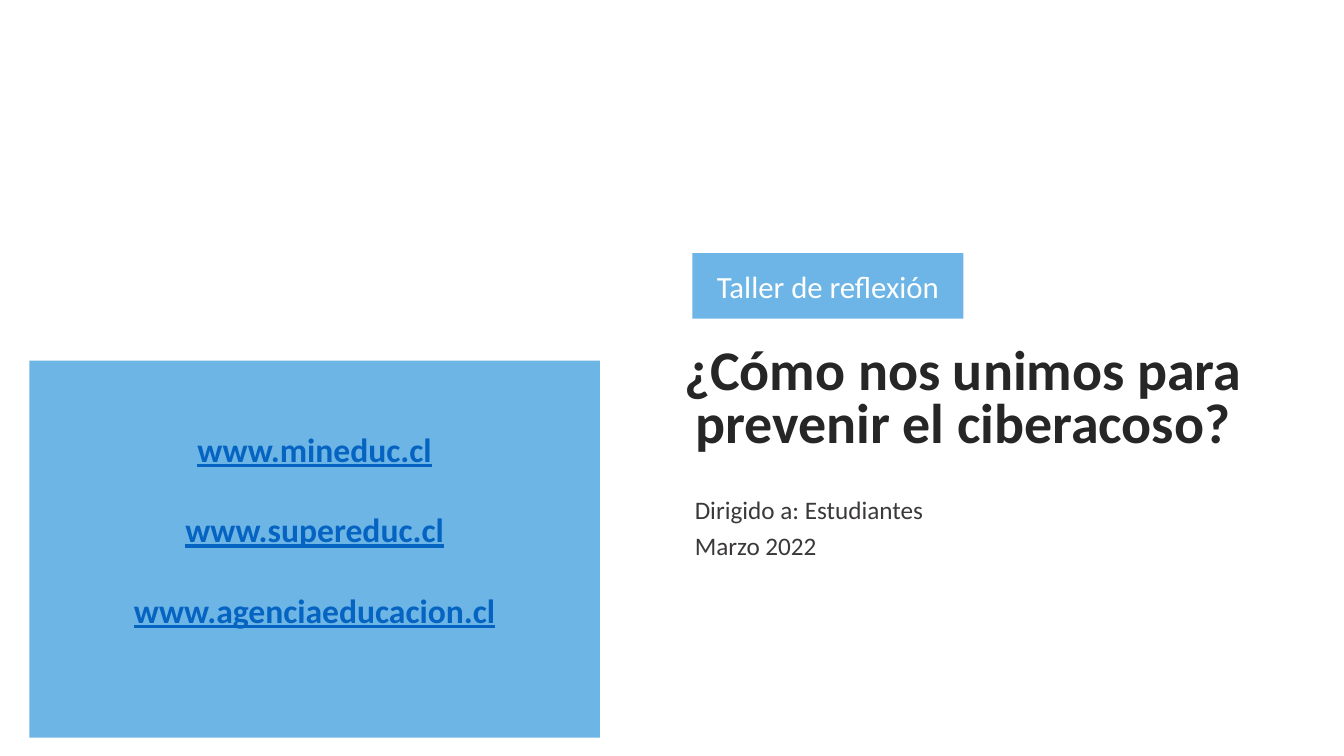
"""Builds the cover slide of a student workshop about cyberbullying."""
from dataclasses import dataclass

from pptx import Presentation
from pptx.dml.color import RGBColor
from pptx.enum.shapes import MSO_SHAPE
from pptx.enum.text import MSO_ANCHOR, PP_ALIGN
from pptx.util import Cm, Pt

RECTANGLE = MSO_SHAPE.RECTANGLE
TOP, MIDDLE = MSO_ANCHOR.TOP, MSO_ANCHOR.MIDDLE
LEFT, CENTER = PP_ALIGN.LEFT, PP_ALIGN.CENTER

TAG = "Taller de reflexión"
TITLE = "¿Cómo nos unimos para prevenir el ciberacoso?"
DETAILS = ["Dirigido a: Estudiantes", "Marzo 2022"]
WEBSITES = ["www.mineduc.cl", "www.supereduc.cl", "www.agenciaeducacion.cl"]

TAG_AREA = (17.45, 6.38, 6.83, 1.65)
TITLE_AREA = (16.48, 8.66, 15.57, 3.0)
DETAIL_AREA = (17.26, 12.32, 16.94, 1.02)
DETAIL_STEP = 0.93
PANEL_AREA = (0.74, 9.09, 14.38, 9.5)
PANEL_INSET = 0.7


@dataclass(frozen=True)
class Theme:
    """Fonts, colours and type sizes of the slide."""
    font: str = "Calibri"
    tag_fill: str = "6CB5E6"
    panel_fill: str = "6DB5E5"
    white: str = "FFFFFF"
    title: str = "262626"
    detail: str = "3B3838"
    link: str = "0563C1"
    tag_size: float = 22
    title_size: float = 40
    title_leading: float = 38
    detail_size: float = 18
    link_size: float = 24
    link_leading: float = 57.5


THEME = Theme()


def add_block(page, area, fill):
    """Add a filled rectangle without outline or shadow."""
    block = page.shapes.add_shape(RECTANGLE, *map(Cm, area))
    block.shadow.inherit = False
    block.fill.solid()
    block.fill.fore_color.rgb = RGBColor.from_string(fill)
    block.line.fill.background()
    return block


def write(box, lines, size, color, align=CENTER, anchor=TOP, leading=None,
          bold=False, underline=False):
    """Fill a shape with equally formatted paragraphs."""
    frame = box.text_frame
    frame.word_wrap = True
    frame.vertical_anchor = anchor
    frame.text = "\n".join(lines)
    for para in frame.paragraphs:
        para.alignment = align
        if leading:
            para.line_spacing = Pt(leading)
        for span in para.runs:
            font = span.font
            font.name, font.size = THEME.font, Pt(size)
            font.bold, font.underline = bold, underline
            font.color.rgb = RGBColor.from_string(color)


def main():
    """Compose and save the slide."""
    deck = Presentation()
    deck.slide_width, deck.slide_height = Cm(33.87), Cm(19.05)
    page = deck.slides.add_slide(deck.slide_layouts[6])

    tag = add_block(page, TAG_AREA, THEME.tag_fill)
    write(tag, [TAG], THEME.tag_size, THEME.white, anchor=MIDDLE)

    title = page.shapes.add_textbox(*map(Cm, TITLE_AREA))
    write(title, [TITLE], THEME.title_size, THEME.title,
          leading=THEME.title_leading, bold=True)

    left, top, width, height = DETAIL_AREA
    for index, detail in enumerate(DETAILS):
        area = (left, top + index * DETAIL_STEP, width, height)
        box = page.shapes.add_textbox(*map(Cm, area))
        write(box, [detail], THEME.detail_size, THEME.detail, align=LEFT)

    panel = add_block(page, PANEL_AREA, THEME.panel_fill)
    panel.text_frame.margin_top = Cm(PANEL_INSET)
    write(panel, WEBSITES, THEME.link_size, THEME.link,
          leading=THEME.link_leading, bold=True, underline=True)

    deck.save("out.pptx")


if __name__ == "__main__":
    main()
